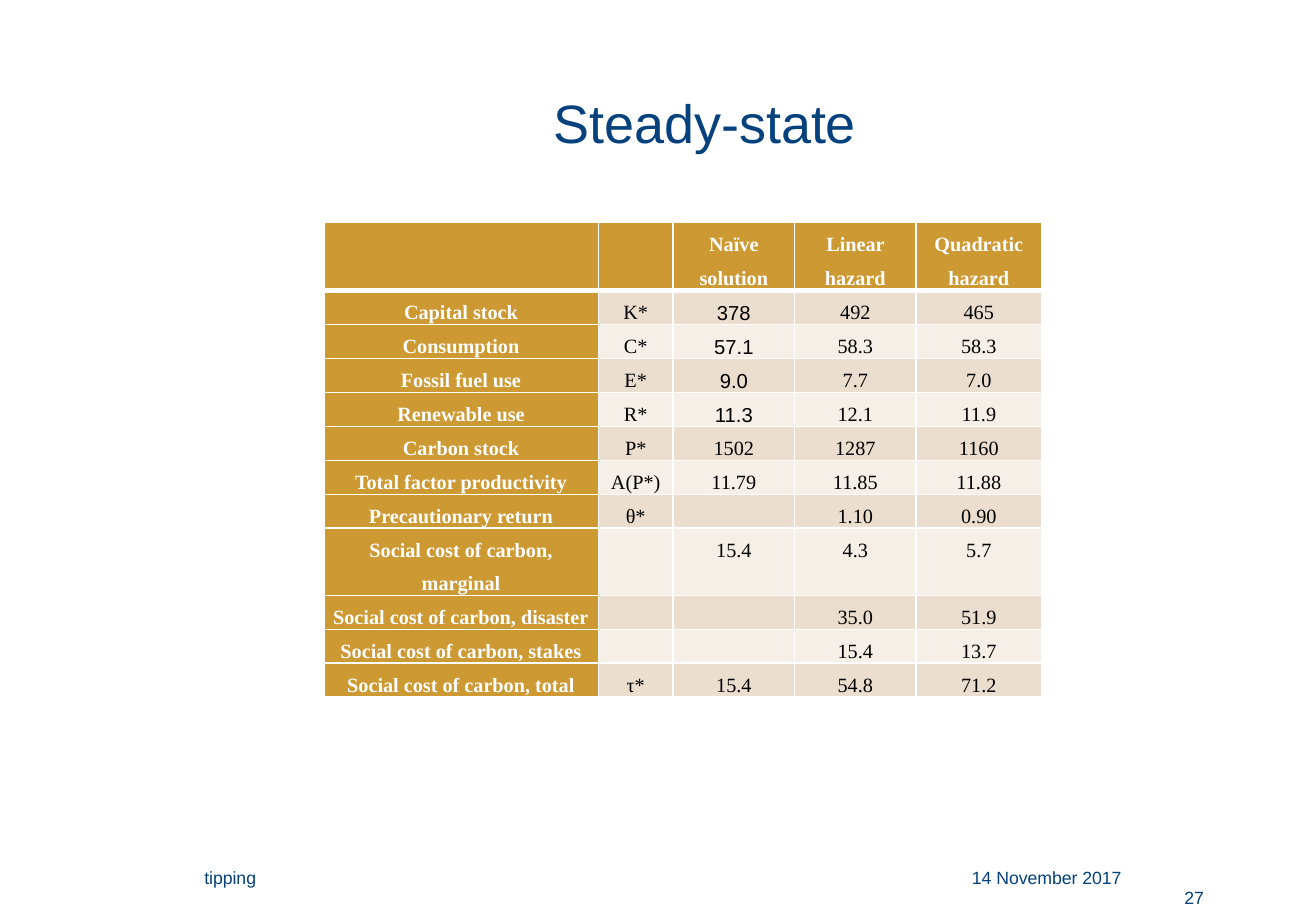
from dataclasses import dataclass

from lxml import etree
from pptx import Presentation
from pptx import util as u
from pptx.dml.color import RGBColor
from pptx.enum import text
from pptx.oxml import ns

# The slide is a grid of 130 columns by 90 rows
GRID_COLUMNS, GRID_ROWS = 130, 90
SLIDE_WIDTH, SLIDE_HEIGHT = u.Inches(GRID_COLUMNS / 12), u.Inches(GRID_ROWS / 12)

NAVY, GOLD, WHITE, BLACK = "04417D", "CC9933", "FFFFFF", "000000"
BANDS = ("ECDECE", "F6EFE8")
SANS, SERIF = "Arial", "Times New Roman"
LEFT, CENTER, RIGHT = text.PP_ALIGN.LEFT, text.PP_ALIGN.CENTER, text.PP_ALIGN.RIGHT
TOP, MIDDLE = text.MSO_ANCHOR.TOP, text.MSO_ANCHOR.MIDDLE


@dataclass
class Label:
    words: str
    column: float
    row: float
    columns: float
    rows: float
    size: float = 10.5
    align: text.PP_ALIGN = LEFT
    anchor: text.MSO_ANCHOR = TOP


LABELS = [
    Label("Steady-state", 19, 4, 101.25, 16, 32, CENTER, MIDDLE),
    Label("14 November 2017", 93, 85, 19, 3, align=RIGHT),
    Label("27", 112, 87, 8.1, 3, align=RIGHT),
    Label("tipping", 19, 85, 26.25, 5),
]

TABLE_COLUMN, TABLE_ROW = 32, 22
COLUMN_WIDTHS = (27.1, 7.4, 12, 12, 12.4)
HEADER_HEIGHT, BODY_HEIGHT = 6.7, 3.25
STEADY_STATES = [
    ("", "", "Naïve solution", "Linear hazard", "Quadratic hazard"),
    ("Capital stock", "K*", "378", "492", "465"),
    ("Consumption", "C*", "57.1", "58.3", "58.3"),
    ("Fossil fuel use", "E*", "9.0", "7.7", "7.0"),
    ("Renewable use", "R*", "11.3", "12.1", "11.9"),
    ("Carbon stock", "P*", "1502", "1287", "1160"),
    ("Total factor productivity", "A(P*)", "11.79", "11.85", "11.88"),
    ("Precautionary return", "θ*", "", "1.10", "0.90"),
    ("Social cost of carbon, marginal", "", "15.4", "4.3", "5.7"),
    ("Social cost of carbon, disaster", "", "", "35.0", "51.9"),
    ("Social cost of carbon, stakes", "", "", "15.4", "13.7"),
    ("Social cost of carbon, total", "τ*", "15.4", "54.8", "71.2"),
]
SANS_ROWS, NAIVE_COLUMN = range(1, 5), 2


def across(columns: float) -> int:
    return round(SLIDE_WIDTH * columns / GRID_COLUMNS)


def down(rows: float) -> int:
    return round(SLIDE_HEIGHT * rows / GRID_ROWS)


def colour(hex_code: str) -> RGBColor:
    return RGBColor.from_string(hex_code)


def apply(target, formats: dict) -> None:
    for attribute, value in formats.items():
        setattr(target, attribute, value)


def write(paragraph, words: str, font: str, size: float, hex_code: str, bold: bool = False) -> None:
    run = paragraph.add_run()
    run.text = words
    apply(run.font, {"name": font, "size": u.Pt(size), "bold": bold})
    run.font.color.rgb = colour(hex_code)


def draw_label(slide, label: Label) -> None:
    box = slide.shapes.add_textbox(across(label.column), down(label.row),
                                   across(label.columns), down(label.rows))
    apply(box.text_frame, {"word_wrap": True, "vertical_anchor": label.anchor})
    paragraph = box.text_frame.paragraphs[0]
    paragraph.alignment = label.align
    write(paragraph, label.words, SANS, label.size, NAVY)


def add_border(cell, side: str, points: float) -> None:
    line = etree.SubElement(cell._tc.get_or_add_tcPr(), ns.qn(f"a:ln{side}"),
                            w=str(u.Pt(points)))
    fill = etree.SubElement(line, ns.qn("a:solidFill"))
    etree.SubElement(fill, ns.qn("a:srgbClr"), val=WHITE)


def draw_cell(cell, row: int, column: int, words: str) -> None:
    heading = row == 0 or column == 0
    apply(cell, {"margin_left": u.Inches(0.07), "margin_right": u.Inches(0.07),
                 "margin_top": 0, "margin_bottom": 0, "vertical_anchor": TOP})

    # Thick rule between the header and the body
    widths = {"L": 1, "R": 1, "T": 3 if row == 1 else 1, "B": 3 if row == 0 else 1}
    for side, points in widths.items():
        add_border(cell, side, points)
    cell.fill.solid()
    cell.fill.fore_color.rgb = colour(GOLD if heading else BANDS[(row - 1) % 2])

    paragraph = cell.text_frame.paragraphs[0]
    if words:
        apply(paragraph, {"alignment": CENTER, "line_spacing": 1.5, "space_after": u.Pt(6)})
        font = SANS if row in SANS_ROWS and column == NAIVE_COLUMN else SERIF
        write(paragraph, words, font, 12, WHITE if heading else BLACK, heading)
    else:
        # Keep empty cells from stretching their row
        etree.SubElement(paragraph._p, ns.qn("a:endParaRPr"), sz="1200")


def draw_table(slide) -> None:
    heights = [HEADER_HEIGHT] + [BODY_HEIGHT] * (len(STEADY_STATES) - 1)
    table = slide.shapes.add_table(
        len(heights), len(COLUMN_WIDTHS), across(TABLE_COLUMN), down(TABLE_ROW),
        across(sum(COLUMN_WIDTHS)), down(sum(heights))).table
    apply(table, {"first_row": False, "horz_banding": False})
    for column, width in zip(table.columns, COLUMN_WIDTHS):
        column.width = across(width)
    for row, height in zip(table.rows, heights):
        row.height = down(height)
    for row, entries in enumerate(STEADY_STATES):
        for column, words in enumerate(entries):
            draw_cell(table.cell(row, column), row, column, words)


def main() -> None:
    deck = Presentation()
    apply(deck, {"slide_width": SLIDE_WIDTH, "slide_height": SLIDE_HEIGHT})
    slide = deck.slides.add_slide(deck.slide_layouts[6])
    draw_table(slide)
    for label in LABELS:
        draw_label(slide, label)
    deck.save("out.pptx")


if __name__ == "__main__":
    main()
